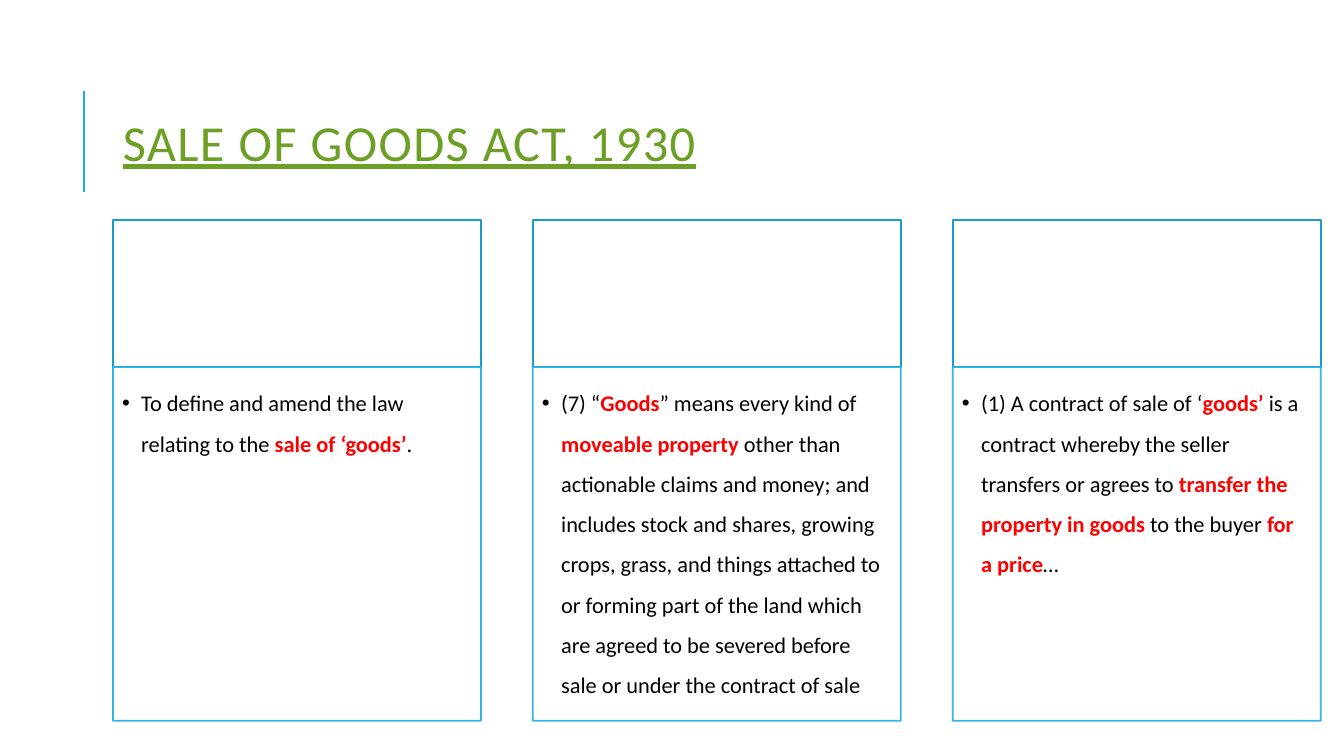
from lxml.etree import SubElement
from pptx import Presentation
from pptx.dml.color import RGBColor
from pptx.enum.shapes import MSO_CONNECTOR, MSO_SHAPE
from pptx.enum.text import MSO_ANCHOR, PP_ALIGN
from pptx.oxml.ns import qn
from pptx.util import Inches, Pt

BLUE, DARK_BLUE, GREEN, RED = "1CADE4", "199DCF", "6B9F25", "FF0000"
LEFT, COL_W, COL_STEP = 1.12, 3.65, 4.165
HEAD_TOP, HEAD_H, BODY_H = 2.18, 1.46, 3.51

COLUMNS = [
    "To define and amend the law relating to the |sale of ‘goods’|.",
    "(7) “|Goods|” means every kind of |moveable property| other than actionable "
    "claims and money; and includes stock and shares, growing crops, grass, and "
    "things attached to or forming part of the land which are agreed to be severed "
    "before sale or under the contract of sale",
    "(1) A contract of sale of ‘|goods’| is a contract whereby the seller transfers "
    "or agrees to |transfer the property in goods| to the buyer |for a price|…",
]


def rgb(value):
    return RGBColor.from_string(value)


def add_text(p, text, size=16, color="000000", line=1.0, underline=None, spc=None):
    """Fill a paragraph; parts between bars are bold and red."""
    p.alignment = PP_ALIGN.LEFT
    p.line_spacing = line
    for i, part in enumerate(text.split("|")):
        r = p.add_run()
        r.text = part
        r.font.name = "Calibri"
        r.font.size = Pt(size)
        r.font.bold = i % 2 == 1
        r.font.underline = underline
        r.font.color.rgb = rgb(RED if i % 2 else color)
        if spc:
            r.font._element.set("spc", str(spc * 100))


prs = Presentation()
prs.slide_width, prs.slide_height = Inches(13.33), Inches(7.5)
slide = prs.slides.add_slide(prs.slide_layouts[6])
shapes = slide.shapes

# Title with its accent line
accent = shapes.add_connector(MSO_CONNECTOR.STRAIGHT, Inches(0.83), Inches(1.9),
                              Inches(0.83), Inches(0.9))
accent.line.color.rgb = rgb(BLUE)
accent.line.width = Pt(1.5)
SubElement(accent._element.spPr, qn("a:effectLst"))

title = shapes.add_textbox(Inches(LEFT), Inches(0.64), Inches(10.63), Inches(1.64))
tf = title.text_frame
tf.word_wrap = True
tf.vertical_anchor = MSO_ANCHOR.MIDDLE
add_text(tf.paragraphs[0], "SALE OF GOODS ACT, 1930", size=36, color=GREEN,
         line=0.8, underline=True, spc=1)

# Three columns: an empty header box above a bulleted body box
for col, text in enumerate(COLUMNS):
    left = LEFT + col * COL_STEP
    for top, height, outline in ((HEAD_TOP, HEAD_H, DARK_BLUE),
                                 (HEAD_TOP + HEAD_H, BODY_H, BLUE)):
        sp = shapes.add_shape(MSO_SHAPE.RECTANGLE, Inches(left), Inches(top),
                              Inches(COL_W), Inches(height))
        sp.shadow.inherit = False
        sp.fill.solid()
        sp.fill.fore_color.rgb = rgb("FFFFFF")
        sp.line.color.rgb = rgb(outline)
        sp.line.width = Pt(1.25)

    # The last box made is the body
    for clr in sp._element.spPr.iter(qn("a:srgbClr")):
        SubElement(clr, qn("a:alpha"), val="90000")
    tf = sp.text_frame
    tf.word_wrap = True
    tf.vertical_anchor = MSO_ANCHOR.TOP
    tf.margin_left = tf.margin_top = Inches(0.09)
    tf.margin_right, tf.margin_bottom = Inches(0.12), Inches(0.14)
    p = tf.paragraphs[0]
    add_text(p, text, line=1.5)
    p.space_after = Pt(2.4)
    pPr = p._p.get_or_add_pPr()
    pPr.set("marL", str(Inches(0.19)))
    pPr.set("indent", str(-Inches(0.19)))
    SubElement(pPr, qn("a:buFont"), typeface="Arial")
    SubElement(pPr, qn("a:buChar"), char="•")

prs.save("out.pptx")
